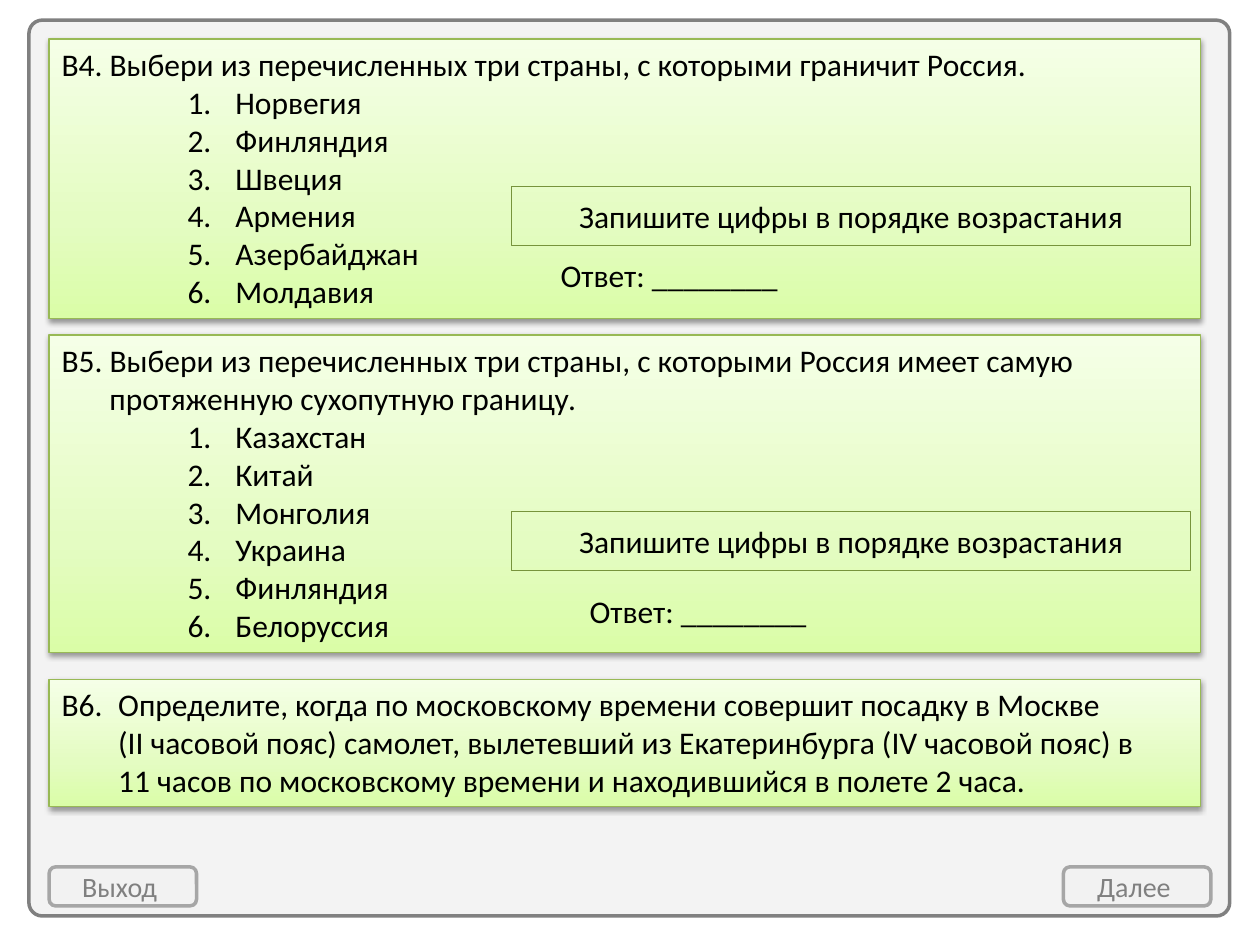
from dataclasses import dataclass

from lxml import etree
from pptx import Presentation
from pptx.dml.color import RGBColor
from pptx.enum.shapes import MSO_SHAPE
from pptx.enum.text import MSO_ANCHOR, MSO_AUTO_SIZE, PP_ALIGN
from pptx.oxml.ns import qn
from pptx.util import Inches, Pt

RECTANGLE, ROUNDED = MSO_SHAPE.RECTANGLE, MSO_SHAPE.ROUNDED_RECTANGLE
LEFT, CENTER = PP_ALIGN.LEFT, PP_ALIGN.CENTER
TOP, MIDDLE = MSO_ANCHOR.TOP, MSO_ANCHOR.MIDDLE
GROW = MSO_AUTO_SIZE.SHAPE_TO_FIT_TEXT


@dataclass(frozen=True)
class Theme:
    font: str = "Calibri"
    body_size: int = 18
    button_size: int = 16
    ink: str = "000000"
    muted: str = "808080"
    surface: str = "F2F2F2"
    button_line: str = "A6A6A6"
    card_line: str = "98B955"
    hint_line: str = "77933C"
    card_stops: tuple = ((0, "DAFDA7"), (35, "E4FCC2"), (100, "F5FFE7"))


def add_element(parent, tag, **attributes):
    element = etree.SubElement(parent, qn(tag))
    for name, value in attributes.items():
        element.set(name, str(value))
    return element


class QuizPage:
    def __init__(self, page, theme):
        self.page = page
        self.theme = theme

    def shape(self, kind, place, line, width):
        box = self.page.shapes.add_shape(kind, *map(Inches, place))
        box.shadow.inherit = False
        box.fill.background()
        box.line.color.rgb = RGBColor.from_string(line)
        box.line.width = Pt(width)
        return box

    def surface(self, place, line):
        """Rounded grey shape, slightly transparent."""
        box = self.shape(ROUNDED, place, line, 2)
        box.fill.solid()
        box.fill.fore_color.rgb = RGBColor.from_string(self.theme.surface)
        color = box._element.spPr.find(qn("a:solidFill"))[0]
        add_element(color, "a:alpha", val=90000)
        return box

    def style(self, para, align=LEFT, size=None, color=None):
        para.alignment = align
        para.font.name = self.theme.font
        para.font.size = Pt(size or self.theme.body_size)
        para.font.color.rgb = RGBColor.from_string(color or self.theme.ink)

    def centered(self, box, text, size=None, color=None):
        frame = box.text_frame
        frame.word_wrap = True
        frame.vertical_anchor = MIDDLE
        frame.text = text
        self.style(frame.paragraphs[0], CENTER, size, color)

    def frame(self, place):
        self.surface(place, self.theme.muted).adjustments[0] = 0.015

    def button(self, left, text):
        box = self.surface((left, 6.88, 1.17, 0.31), self.theme.button_line)
        self.centered(box, text, self.theme.button_size, self.theme.muted)

    def hint(self, top):
        box = self.shape(RECTANGLE, (4.06, top, 5.39, 0.47), self.theme.hint_line, 0.25)
        self.centered(box, "Запишите цифры в порядке возрастания")

    def answer(self, left, top):
        box = self.page.shapes.add_textbox(*map(Inches, (left, top, 2.34, 0.31)))
        self.centered(box, "Ответ: ________")

    def card(self, top, height):
        """Green gradient panel with a soft shadow; returns its text frame."""
        box = self.shape(RECTANGLE, (0.39, top, 9.14, height), self.theme.card_line, 0.75)
        box.fill.gradient()
        box.fill.gradient_angle = 90
        properties = box._element.spPr
        stops = properties.find(qn("a:gradFill")).find(qn("a:gsLst"))
        for stop in list(stops):
            stops.remove(stop)
        for position, color in self.theme.card_stops:
            stop = add_element(stops, "a:gs", pos=position * 1000)
            add_element(stop, "a:srgbClr", val=color)
        shadow = add_element(
            properties.find(qn("a:effectLst")), "a:outerShdw", blurRad=int(Pt(3.1)),
            dist=int(Pt(1.6)), dir=5400000, rotWithShape=0)
        shade = add_element(shadow, "a:srgbClr", val="000000")
        add_element(shade, "a:alpha", val=38000)
        frame = box.text_frame
        frame.word_wrap = True
        frame.vertical_anchor = TOP
        frame.auto_size = GROW
        return frame

    def line(self, frame, text, margin, indent, numbered=False):
        first = frame.paragraphs[0]
        para = frame.add_paragraph() if first.runs else first
        para.text = text
        properties = para._p.get_or_add_pPr()
        properties.set("marL", str(Inches(margin)))
        properties.set("indent", str(Inches(indent)))
        if numbered:
            para.level = 1
            add_element(properties, "a:buFont", typeface="+mj-lt")
            add_element(properties, "a:buAutoNum", type="arabicPeriod")
        self.style(para)

    def choice_question(self, top, height, question, countries):
        frame = self.card(top, height)
        self.line(frame, question, 0.38, -0.38)
        for country in countries:
            self.line(frame, country, 1.38, -0.38, numbered=True)

    def open_question(self, top, height, first, *rest):
        frame = self.card(top, height)
        self.line(frame, first, 0.45, -0.45)
        for text in rest:
            self.line(frame, text, 0.45, 0)


def main():
    deck = Presentation()
    deck.slide_width, deck.slide_height = Inches(10), Inches(7.5)
    quiz = QuizPage(deck.slides.add_slide(deck.slide_layouts[6]), Theme())

    quiz.frame((0.23, 0.16, 9.53, 7.11))
    quiz.button(0.39, "Выход ")
    quiz.choice_question(
        0.31, 2.22,
        "В4. Выбери из перечисленных три страны, с которыми граничит Россия.",
        ("Норвегия", "Финляндия", "Швеция", "Армения", "Азербайджан", "Молдавия"))
    quiz.choice_question(
        2.66, 2.52,
        "В5. Выбери из перечисленных три страны, с которыми Россия имеет самую "
        "протяженную сухопутную границу.",
        ("Казахстан", "Китай", "Монголия", "Украина", "Финляндия", "Белоруссия"))
    quiz.open_question(
        5.39, 1.01,
        "В6.\tОпределите, когда по московскому времени совершит посадку в Москве",
        "(II часовой пояс) самолет, вылетевший из Екатеринбурга (IV часовой пояс) в",
        "11 часов по московскому времени и находившийся в полете 2 часа.")
    for top in (1.48, 4.06):
        quiz.hint(top)
    quiz.answer(4.14, 2.03)
    quiz.answer(4.37, 4.69)
    quiz.button(8.44, "Далее ")

    deck.save("out.pptx")


if __name__ == "__main__":
    main()
